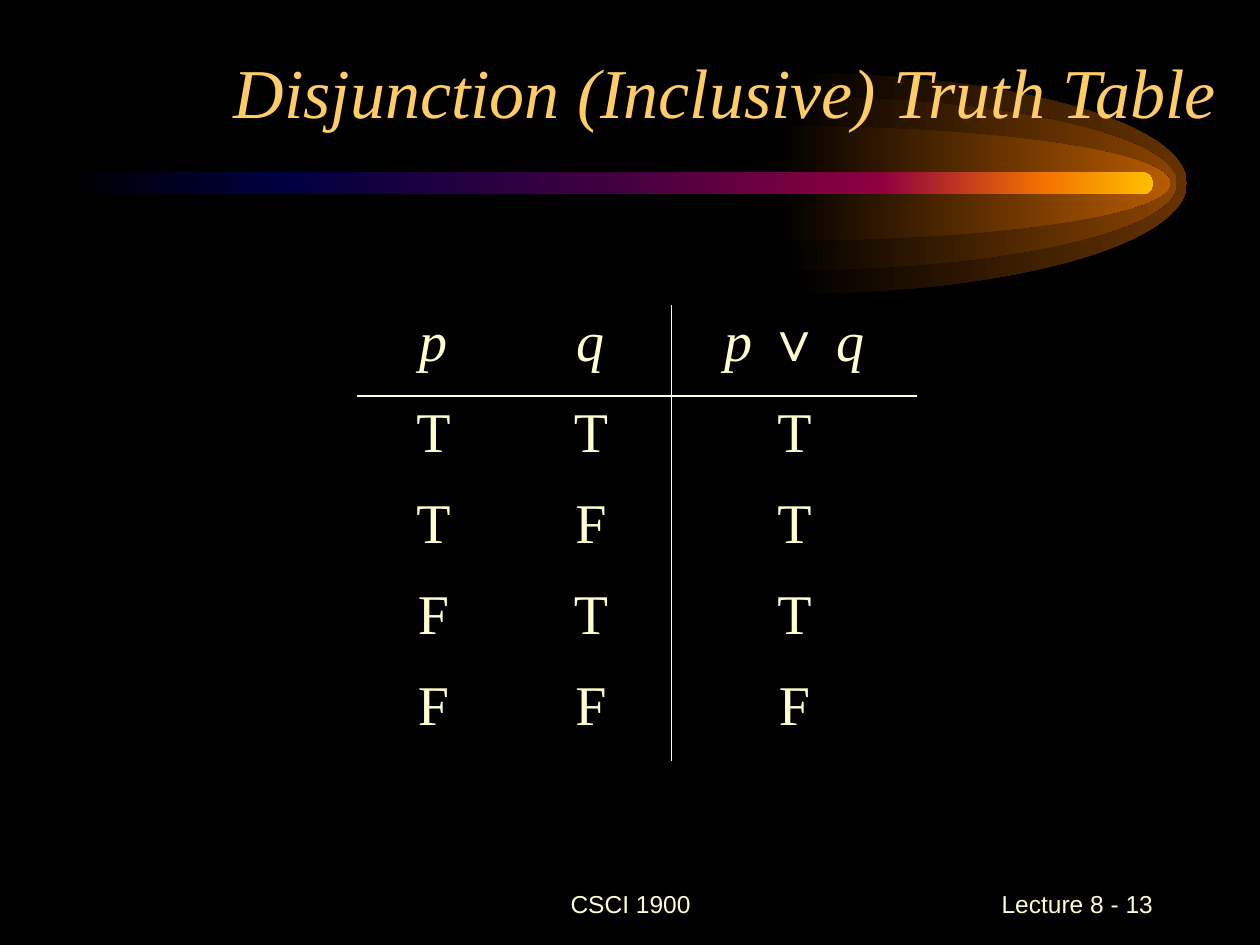
from pptx import Presentation
from pptx.dml.color import RGBColor
from pptx.enum.shapes import MSO_SHAPE
from pptx.enum.text import MSO_ANCHOR, MSO_AUTO_SIZE, PP_ALIGN
from pptx.oxml.ns import qn
from pptx.oxml.xmlchemy import OxmlElement
from pptx.util import Inches, Pt

W, H = 10, 7.5
COLORS = {"back": "000000", "text": "FFFFCC", "title": "FFCC66",
          "outer": "663300", "middle": "894400", "inner": "B75B00",
          "navy": "000040", "plum": "400040", "wine": "8F0040",
          "orange": "F27300", "gold": "FFBF00"}
SERIF, SANS = "Times New Roman", "Arial"
NO_STYLE = "{2D5ABB26-0587-4C30-8999-92F81FD0307C}"
ROWS = [("p", "q", "p ∨ q"), "TTT", "TFT", "FTT", "FFF"]


def rgb(name):
    """Look up a named colour."""
    return RGBColor.from_string(COLORS[name])


def add_node(parent, tag, **attrs):
    """Append an XML element with its attributes."""
    node = OxmlElement(tag)
    for key, value in attrs.items():
        node.set(key, str(value))
    parent.append(node)
    return node


def add_run(p, text, font, size, color, italic=False):
    """Add one formatted run to a paragraph."""
    r = p.add_run()
    r.text = text
    r.font.name, r.font.size, r.font.italic = font, Pt(size), italic
    r.font.color.rgb = rgb(color)


def paint(sp, stops):
    """Fill a shape with a left-to-right gradient and no outline."""
    sp.shadow.inherit = False
    sp.line.fill.background()
    sp.fill.gradient()
    sp.fill.gradient_angle = 0
    stop_list = sp._element.spPr.find(".//" + qn("a:gsLst"))
    for old in list(stop_list):
        stop_list.remove(old)
    for pos, name in stops:
        gs = add_node(stop_list, "a:gs", pos=pos * 1000)
        add_node(gs, "a:srgbClr", val=COLORS[name])


def add_half_ellipse(s, x, y, w, h):
    """Draw the right half of an ellipse as two curves."""
    k, mid, right, bottom = 0.55, y + h / 2, x + w, y + h
    points = [(x, y), (x + k * w, y), (right, mid - k * h / 2), (right, mid),
              (right, mid + k * h / 2), (x + k * w, bottom), (x, bottom)]
    points = [(Inches(px), Inches(py)) for px, py in points]
    fb = s.shapes.build_freeform(*points[0], scale=1.0)
    fb.add_line_segments(points[1:], close=True)
    sp = fb.convert_to_shape()
    lines = sp._element.findall(".//" + qn("a:lnTo"))
    for i in (0, 3):
        curve = OxmlElement("a:cubicBezTo")
        lines[i].addprevious(curve)
        for line in lines[i:i + 3]:
            curve.append(line[0])
            line.getparent().remove(line)
    return sp


def add_comet(s, box):
    """Draw the glowing halos and the tail inside the box."""
    x, y, w, h = box
    radius = 0.35 * w
    for name, inset, tall in (("outer", 0, 1), ("middle", 0.08, 0.79),
                              ("inner", 0.13, 0.52)):
        halo = add_half_ellipse(s, x + w - inset - radius,
                                y + h * (1 - tall) / 2, radius, h * tall)
        paint(halo, [(0, "back"), (100, name)])
    tail = s.shapes.add_shape(MSO_SHAPE.ROUNDED_RECTANGLE, Inches(x),
                              Inches(y + 0.45 * h), Inches(0.97 * w),
                              Inches(0.1 * h))
    tail.adjustments[0] = 0.5
    paint(tail, [(0, "back"), (20, "navy"), (50, "plum"), (75, "wine"),
                 (90, "orange"), (100, "gold")])


def add_title(s, box, text):
    """Place the title placeholder in front of the comet."""
    sp = s.shapes.title
    sp.left, sp.top, sp.width, sp.height = map(Inches, box)
    s.shapes._spTree.append(sp._element)
    tf = sp.text_frame
    tf.auto_size, tf.vertical_anchor = MSO_AUTO_SIZE.NONE, MSO_ANCHOR.BOTTOM
    p = tf.paragraphs[0]
    p.alignment = PP_ALIGN.RIGHT
    add_run(p, text, SERIF, 40, "title", True)


def add_footer(s, box, text, align):
    """Place one line of footer text."""
    tf = s.shapes.add_textbox(*map(Inches, box)).text_frame
    tf.word_wrap, tf.vertical_anchor = True, MSO_ANCHOR.MIDDLE
    p = tf.paragraphs[0]
    p.alignment = align
    add_run(p, text, SANS, 14, "text")


def add_border(cell, side, ruled):
    """Rule one side of a table cell, or leave it open."""
    ln = add_node(cell._tc.get_or_add_tcPr(), "a:ln" + side, w=Pt(1))
    if ruled:
        add_node(add_node(ln, "a:solidFill"), "a:srgbClr", val=COLORS["text"])
    else:
        add_node(ln, "a:noFill")


def add_truth_table(s, box, rows, widths):
    """Place the truth table, ruled under its head and before its result."""
    n, last = len(rows), len(widths) - 1
    table = s.shapes.add_table(n, last + 1, *map(Inches, box)).table
    table.first_row = table.horz_banding = False
    table._tbl.tblPr.find(qn("a:tableStyleId")).text = NO_STYLE
    for col, width in zip(table.columns, widths):
        col.width = Inches(box[2] * width / sum(widths))
    for i, row in enumerate(rows):
        table.rows[i].height = Inches(box[3] / n)
        for j, text in enumerate(row):
            cell = table.cell(i, j)
            rules = {"L": j == last, "R": j == last - 1, "T": i == 1, "B": i == 0}
            for side, ruled in rules.items():
                add_border(cell, side, ruled)
            cell.fill.background()
            p = cell.text_frame.paragraphs[0]
            p.alignment = PP_ALIGN.CENTER
            parts = ("p ", "∨ ", "q") if "∨" in text else (text,)
            for part in parts:
                add_run(p, part, SERIF, 32, "text", part.strip() in ("p", "q"))


def main():
    """Build the slide and save it."""
    prs = Presentation()
    prs.slide_width, prs.slide_height = Inches(W), Inches(H)
    s = prs.slides.add_slide(prs.slide_layouts[5])
    s.background.fill.solid()
    s.background.fill.fore_color.rgb = rgb("back")
    add_comet(s, (0.05 * W, 0.58, 8.92, 1.75))
    add_footer(s, (3.42, 6.92, 3.17, 0.5), "CSCI 1900", PP_ALIGN.CENTER)
    add_footer(s, (7.17, 6.92, 2.08, 0.5), "Lecture 8 - 13", PP_ALIGN.RIGHT)
    add_title(s, (0.75, 0.42, 0.9 * W, 0.68), "Disjunction (Inclusive) Truth Table")
    add_truth_table(s, (2.83, 2.42, 4.45, 3.62), ROWS, (1.22, 1.28, 1.95))
    prs.save("out.pptx")


if __name__ == "__main__":
    main()
